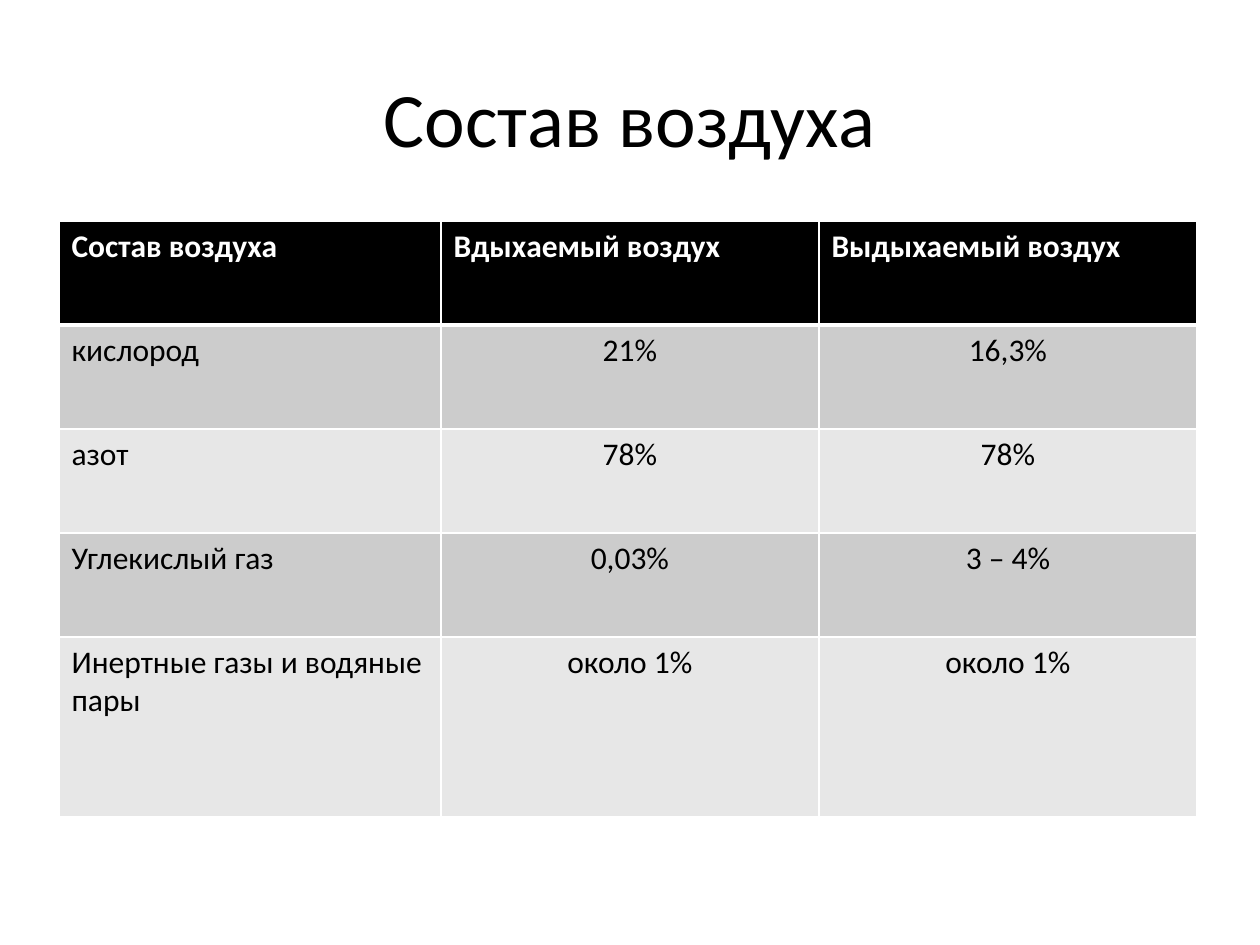
import pptx
import pptx.util
import pptx.dml.color
import pptx.enum.text
import pptx.oxml
import pptx.oxml.ns

RGB = pptx.dml.color.RGBColor
ALIGN = pptx.enum.text.PP_ALIGN
ANCHOR = pptx.enum.text.MSO_ANCHOR

BLACK = RGB(0x00, 0x00, 0x00)
WHITE = RGB(0xFF, 0xFF, 0xFF)
BAND_DARK = RGB(0xCC, 0xCC, 0xCC)
BAND_LIGHT = RGB(0xE7, 0xE7, 0xE7)
FONT = "Calibri"

TITLE = "Состав воздуха"
AIR = [
    ("Состав воздуха", "Вдыхаемый воздух", "Выдыхаемый воздух"),
    ("кислород", "21%", "16,3%"),
    ("азот", "78%", "78%"),
    ("Углекислый газ", "0,03%", "3 – 4%"),
    ("Инертные газы и водяные пары", "около 1%", "около 1%"),
]
COL_WIDTHS = [382, 378, 378]
ROW_HEIGHTS = [104, 104, 104, 104, 180]


def px(n):
    """Turn px, at 126 to the inch, into EMU."""
    return pptx.util.Emu(round(n * 914400 / 126))


def put_text(tf, text, size=18, color=BLACK, bold=False, align=ALIGN.LEFT):
    p = tf.paragraphs[0]
    p.alignment = align
    r = p.add_run()
    r.text = text
    r.font.name = FONT
    r.font.size = pptx.util.Pt(size)
    r.font.bold = bold
    r.font.color.rgb = color


def set_borders(cell, color, **widths):
    """Draw cell borders; widths in points for L, R, T and B."""
    tcPr = cell._tc.get_or_add_tcPr()
    for i, (side, width) in enumerate(widths.items()):
        ln = pptx.oxml.parse_xml(
            f'<a:ln{side} {pptx.oxml.ns.nsdecls("a")} w="{pptx.util.Pt(width)}">'
            f'<a:solidFill><a:srgbClr val="{color}"/></a:solidFill></a:ln{side}>')
        tcPr.insert(i, ln)


def add_title(s, text):
    title = s.shapes.title
    title.left, title.top, title.width, title.height = map(px, (63, 38, 1134, 158))
    title.text_frame.vertical_anchor = ANCHOR.MIDDLE
    put_text(title.text_frame, text, size=44, align=ALIGN.CENTER)


def add_air_table(s, x, y):
    table = s.shapes.add_table(len(AIR), len(COL_WIDTHS), px(x), px(y),
                               px(sum(COL_WIDTHS)), px(sum(ROW_HEIGHTS))).table
    for col, width in zip(table.columns, COL_WIDTHS):
        col.width = px(width)
    for row, height in zip(table.rows, ROW_HEIGHTS):
        row.height = px(height)

    for i, texts in enumerate(AIR):
        header = i == 0
        fill = BLACK if header else (BAND_DARK if i % 2 else BAND_LIGHT)
        for j, text in enumerate(texts):
            cell = table.cell(i, j)
            cell.fill.solid()
            cell.fill.fore_color.rgb = fill
            # A thicker rule parts the header from the values
            set_borders(cell, WHITE, L=1, R=1, T=3 if i == 1 else 1, B=3 if header else 1)
            put_text(cell.text_frame, text, color=WHITE if header else BLACK, bold=header,
                     align=ALIGN.LEFT if header or j == 0 else ALIGN.CENTER)


def main():
    prs = pptx.Presentation()
    prs.slide_width, prs.slide_height = px(1260), px(945)
    s = prs.slides.add_slide(prs.slide_layouts[5])  # title only
    add_title(s, TITLE)
    add_air_table(s, 59, 221)
    prs.save("out.pptx")


if __name__ == "__main__":
    main()
